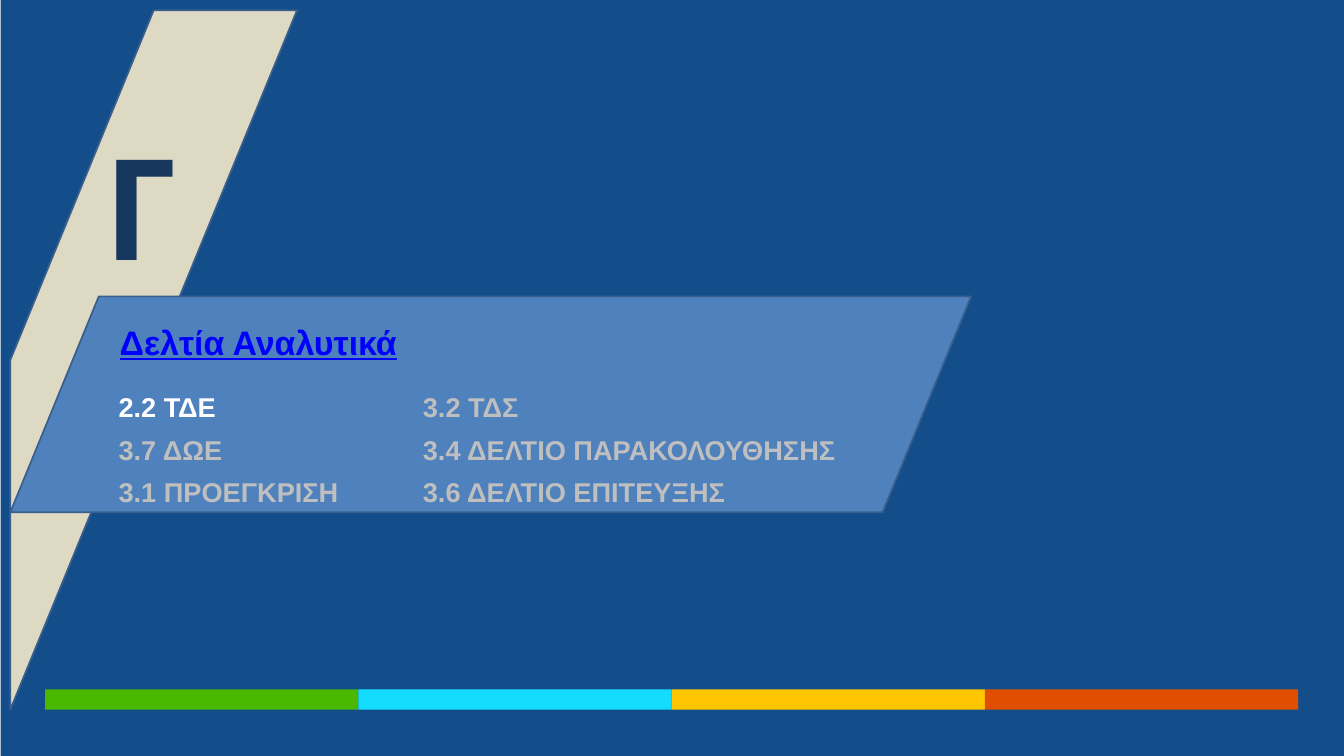
"""Build the section divider slide for chapter Γ, Δελτία Αναλυτικά."""
from pptx import Presentation
from pptx.dml.color import RGBColor
from pptx.enum.shapes import MSO_SHAPE as Shape
from pptx.enum.text import PP_ALIGN as Align
from pptx.util import Pt

LETTER = "Γ"
TITLE = "Δελτία Αναλυτικά"
COLUMNS = [
    {"left": 96.5, "width": 348.5,
     "items": [("2.2 ΤΔΕ", "current"), ("3.7 ΔΩΕ", "other"), ("3.1 ΠΡΟΕΓΚΡΙΣΗ", "other")]},
    {"left": 455, "width": 560,
     "items": [("3.2 ΤΔΣ", "other"), ("3.4 ΔΕΛΤΙΟ ΠΑΡΑΚΟΛΟΥΘΗΣΗΣ", "other"),
               ("3.6 ΔΕΛΤΙΟ ΕΠΙΤΕΥΞΗΣ", "other")]},
]
THEME = {
    "panel": "134E8A", "stripe": "DDD9C3", "band": "4F81BD", "outline": "3A5F8C",
    "bars": ["4BB800", "13DCFF", "FFC500", "E04E00"],
    "letter": {"name": "Roboto Condensed", "size": 166, "color": "17375E"},
    "title": {"name": "Arial", "size": 40, "color": "0000FF", "underline": True},
    "current": {"name": "Arial", "size": 32, "color": "FFFFFF"},
    "other": {"name": "Arial", "size": 32, "color": "BFBFBF"},
}
SLIDE_WIDTH, SLIDE_HEIGHT = 1583.28, 890.64
BAR_LEFT, BAR_TOP, BAR_WIDTH, BAR_HEIGHT = 53.3, 812.2, 369, 23.8
INSET, ITEM_INDENT = 7.2, 36


def add_block(page, kind, frame, fill, outline=None):
    """Add a filled preset shape, outlined when a colour is given."""
    block = page.shapes.add_shape(kind, *map(Pt, frame))
    block.shadow.inherit = False
    block.fill.solid()
    block.fill.fore_color.rgb = RGBColor.from_string(fill)
    if outline:
        block.line.color.rgb = RGBColor.from_string(outline)
        block.line.width = Pt(2)
    else:
        block.line.fill.background()
    return block


def add_text(page, frame, lines, indent=0, **layout):
    """Add a text box with one bold paragraph for each (text, style) line."""
    box = page.shapes.add_textbox(*map(Pt, frame)).text_frame
    box.word_wrap = True
    box.margin_left = Pt(INSET + indent)
    for index, (text, style) in enumerate(lines):
        para = box.paragraphs[0] if index == 0 else box.add_paragraph()
        for name, value in layout.items():
            setattr(para, name, value)
        span = para.add_run()
        span.text = text
        look = {**THEME[style], "bold": True}
        span.font.color.rgb = RGBColor.from_string(look.pop("color"))
        look["size"] = Pt(look["size"])
        for name, value in look.items():
            setattr(span.font, name, value)


def main():
    """Draw the slide and save the deck."""
    deck = Presentation()
    deck.slide_width, deck.slide_height = Pt(SLIDE_WIDTH), Pt(SLIDE_HEIGHT)
    page = deck.slides.add_slide(deck.slide_layouts[6])

    add_block(page, Shape.RECTANGLE, (0.72, 0, SLIDE_WIDTH - 0.72, SLIDE_HEIGHT), THEME["panel"])
    add_block(page, Shape.DIAGONAL_STRIPE, (12.2, 12.2, 337.7, 823.7),
              THEME["stripe"], THEME["outline"])
    for index, color in enumerate(THEME["bars"]):
        left = BAR_LEFT + index * BAR_WIDTH
        add_block(page, Shape.RECTANGLE, (left, BAR_TOP, BAR_WIDTH, BAR_HEIGHT), color)
    band = add_block(page, Shape.PARALLELOGRAM, (12.2, 349.2, 1131.8, 254.2),
                     THEME["band"], THEME["outline"])
    band.adjustments[0] = 0.41

    add_text(page, (110.2, 136.8, 117.4, 208), [(LETTER, "letter")], alignment=Align.CENTER)
    add_text(page, (133.9, 360.7, 942.5, 64), [(TITLE, "title")], line_spacing=1.3)
    for column in COLUMNS:
        add_text(page, (column["left"], 445, column["width"], 154), column["items"],
                 indent=ITEM_INDENT, line_spacing=1.3)
    deck.save("out.pptx")


if __name__ == "__main__":
    main()
